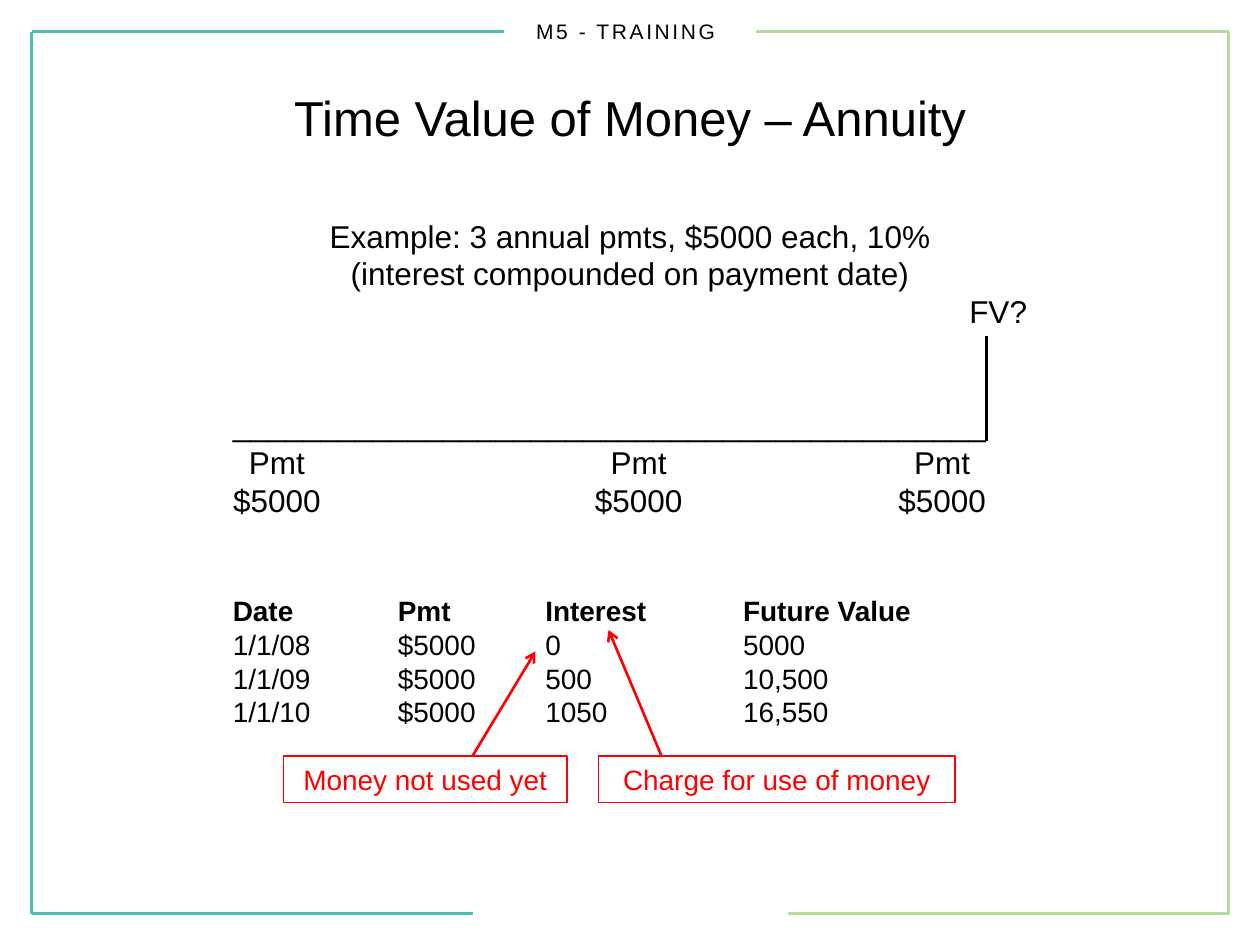
import pptx
import pptx.util
import pptx.dml.color
import pptx.enum.shapes
import pptx.enum.text
import pptx.oxml.ns
from lxml import etree

Inches, Pt = pptx.util.Inches, pptx.util.Pt
ALIGN = pptx.enum.text.PP_ALIGN
ANCHOR = pptx.enum.text.MSO_ANCHOR
qn = pptx.oxml.ns.qn

# Content
HEADER = "M5 - TRAINING "
TITLE = "Time Value of Money – Annuity"
EXAMPLE = ["Example: 3 annual pmts, $5000 each, 10%",
           "(interest compounded on payment date)"]
QUESTION = "FV?"
TIMELINE = "_" * 43
PAYMENTS = [("Pmt", "Pmt", "Pmt"), ("$5000", "$5000", "$5000")]
SCHEDULE = [("Date", "Pmt", "Interest", "Future Value"),
            ("1/1/08", "$5000", "0", "5000"),
            ("1/1/09", "$5000", "500", "10,500"),
            ("1/1/10", "$5000", "1050", "16,550")]
# Label, left, width, arrow start, arrow end
CALLOUTS = [("Money not used yet", 2.25, 2.25, (3.75, 6), (4.25, 5.17)),
            ("Charge for use of money", 4.75, 2.83, (5.25, 6), (4.83, 5))]

THEME = {"font": "Arial", "text": "000000", "accent": "FF0000",
         "frame_left": "4CC1B0", "frame_right": "B7DA9C",
         "header": 12, "title": 28, "body": 18, "small": 16}

# Layout
WIDTH, HEIGHT, MARGIN = 10, 7.5, 0.25
TOP_REACH, BOTTOM_REACH = 3.75, 3.5
PAYMENT_TABS = [("ctr", 0.35), ("ctr", 3.22), ("ctr", 5.63)]
SCHEDULE_TABS = [("l", 1.31), ("l", 2.48), ("l", 4.05)]
SECTION_GAP = 43
CALLOUT_TOP, CALLOUT_HEIGHT = 6, 0.37


def rgb(name):
    return pptx.dml.color.RGBColor.from_string(THEME[name])


def style(para, size, color="text", align=ALIGN.CENTER, bold=False):
    para.alignment = align
    for span in para.runs:
        span.font.name = THEME["font"]
        span.font.size = Pt(THEME[size])
        span.font.bold = bold
        span.font.color.rgb = rgb(color)


def add_line(page, start, end, color, weight, arrow=False):
    line = page.shapes.add_connector(
        pptx.enum.shapes.MSO_CONNECTOR.STRAIGHT,
        *(Inches(value) for value in (*start, *end)))
    line.line.color.rgb = rgb(color)
    line.line.width = Pt(weight)
    if arrow:
        etree.SubElement(line.line._get_or_add_ln(), qn("a:tailEnd"), type="arrow")
    etree.SubElement(line._element.spPr, qn("a:effectLst"))


def add_frame(page):
    for color, edge, inward in (("frame_left", MARGIN, 1),
                                ("frame_right", WIDTH - MARGIN, -1)):
        top, bottom = MARGIN, HEIGHT - MARGIN
        add_line(page, (edge, top), (edge, bottom), color, 2.25)
        for y, reach in ((top, TOP_REACH), (bottom, BOTTOM_REACH)):
            add_line(page, (edge, y), (edge + inward * reach, y), color, 2.25)


def add_text(page, left, top, width, height, text):
    box = page.shapes.add_textbox(*(Inches(value) for value in
                                    (left, top, width, height)))
    box.text_frame.word_wrap = True
    box.text_frame.text = text
    return box.text_frame


def add_header(page):
    frame = add_text(page, 0, 0, WIDTH, 0.5, HEADER)
    frame.vertical_anchor = ANCHOR.MIDDLE
    style(frame.paragraphs[0], "header")
    frame.paragraphs[0].runs[0].font._element.set("spc", "150")


def body_lines():
    """Yield text, size, alignment, bold, space before and tab stops."""
    for text in EXAMPLE:
        yield text, "body", ALIGN.CENTER, False, 0, []
    yield QUESTION, "body", ALIGN.RIGHT, False, 0, []
    yield TIMELINE, "body", ALIGN.LEFT, False, SECTION_GAP, []
    for row in PAYMENTS:
        yield "\t" + "\t".join(row), "body", ALIGN.LEFT, False, 0, PAYMENT_TABS
    for index, row in enumerate(SCHEDULE):
        first = index == 0
        yield ("\t".join(row), "small", ALIGN.LEFT, first,
               SECTION_GAP if first else 0, SCHEDULE_TABS)


def add_body(page):
    lines = list(body_lines())
    frame = add_text(page, 1.75, 1.67, 6.5, 4.21,
                     "\n".join(line[0] for line in lines))
    for para, (_, size, align, bold, gap, tabs) in zip(frame.paragraphs, lines):
        if gap:
            para.space_before = Pt(gap)
        if tabs:
            stops = etree.SubElement(para._p.get_or_add_pPr(), qn("a:tabLst"))
            for kind, position in tabs:
                etree.SubElement(stops, qn("a:tab"),
                                 pos=str(Inches(position)), algn=kind)
        style(para, size, align=align, bold=bold)


def add_callout(page, label, left, width, start, end):
    box = page.shapes.add_shape(
        pptx.enum.shapes.MSO_SHAPE.RECTANGLE, Inches(left), Inches(CALLOUT_TOP),
        Inches(width), Inches(CALLOUT_HEIGHT))
    box.shadow.inherit = False
    box.fill.background()
    box.line.color.rgb = rgb("accent")
    box.line.width = Pt(0.75)
    box.text_frame.word_wrap = True
    box.text_frame.vertical_anchor = ANCHOR.TOP
    box.text_frame.text = label
    style(box.text_frame.paragraphs[0], "small", "accent")
    add_line(page, start, end, "accent", 1.5, arrow=True)


def main():
    deck = pptx.Presentation()
    deck.slide_width, deck.slide_height = Inches(WIDTH), Inches(HEIGHT)
    page = deck.slides.add_slide(deck.slide_layouts[5])

    # Frame and header
    add_frame(page)
    add_header(page)

    # Title
    title = page.shapes.title
    title.left, title.top = Inches(0.5), Inches(0.3)
    title.width, title.height = Inches(9), Inches(1.25)
    title.text_frame.text = TITLE
    title.text_frame.vertical_anchor = ANCHOR.MIDDLE
    style(title.text_frame.paragraphs[0], "title")

    # Example, timeline and schedule
    add_body(page)
    add_line(page, (7.83, 3.5), (7.83, 2.67), "text", 1.75)

    # Callouts
    for callout in CALLOUTS:
        add_callout(page, *callout)

    deck.save("out.pptx")


if __name__ == "__main__":
    main()
